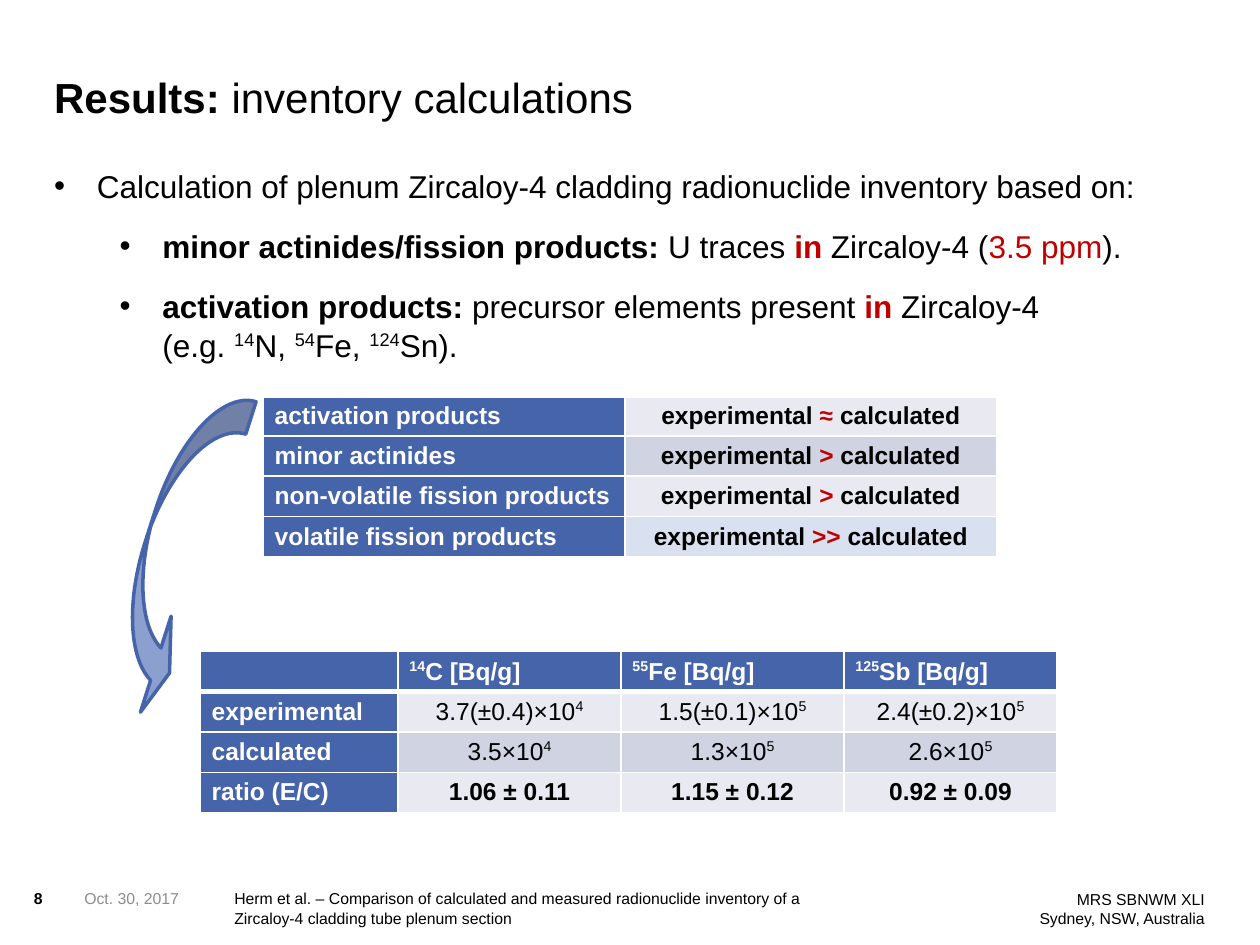
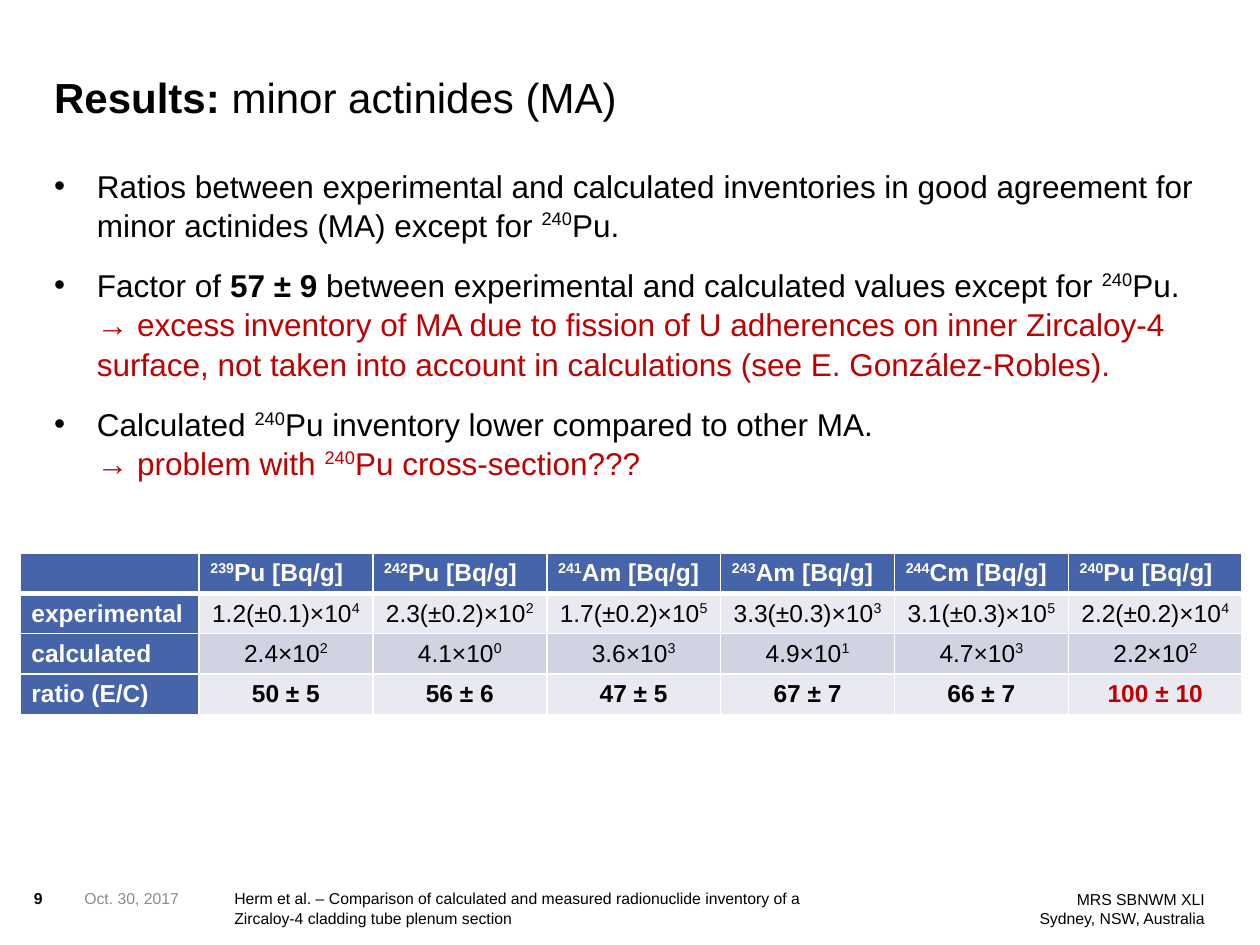
from dataclasses import dataclass, replace
from typing import NamedTuple

from lxml.etree import SubElement
from pptx import Presentation
from pptx.dml.color import RGBColor
from pptx.enum.shapes import MSO_SHAPE
from pptx.enum.text import MSO_ANCHOR, PP_ALIGN
from pptx.oxml.ns import qn
from pptx.util import Inches, Pt

FONT = "Arial"
INK = {
    "black": "000000",
    "white": "FFFFFF",
    "red": "C00000",
    "grey": "8C8C8C",
    "blue": "4664AA",
    "arrow": "8CA0D0",
    "light": "E9EAF1",
    "mid": "CFD3E2",
    "pale": "D9E0EF",
}


class Bit(NamedTuple):
    text: str
    bold: bool = False
    ink: str = "black"
    sup: bool = False


class Box(NamedTuple):
    left: float
    top: float
    width: float
    height: float


class Line(NamedTuple):
    bits: list[Bit]
    indent: float = 0


@dataclass(frozen=True)
class Cell:
    bits: list[Bit]
    fill: str = "blue"
    mid: bool = False


@dataclass(frozen=True)
class Grid:
    left: float
    top: float
    cols: list[float]
    rows: list[list[Cell]]
    rule: int


BREAK = Bit("\n")
TITLE = Box(0.43, 0.36, 7.56, 0.61)
BODY = Box(0.43, 1.31, 9.14, 2.52)
VENUE = Box(6.57, 7.06, 2.99, 0.39)
NUMBER = Box(0.27, 7.05, 0.36, 0.24)
DATE = Box(0.67, 7.05, 1.14, 0.39)
PAPER = Box(1.86, 7.05, 4.65, 0.39)
ROW = 0.32
HANG = 0.34


def tint(name: str) -> RGBColor:
    return RGBColor.from_string(INK[name])


def write(par, bits: list[Bit], size: float) -> None:
    for bit in bits:
        if bit == BREAK:
            par.add_line_break()
            continue
        run = par.add_run()
        run.text = bit.text
        font = run.font
        font.name, font.size, font.bold = FONT, Pt(size), bit.bold
        font.color.rgb = tint(bit.ink)
        if bit.sup:
            run._r.get_or_add_rPr().set("baseline", "36000")


def bullet(par, indent: float) -> None:
    props = par._p.get_or_add_pPr()
    props.set("marL", str(Inches(indent)))
    props.set("indent", str(-Inches(HANG)))
    SubElement(props, qn("a:buFont"), typeface=FONT)
    SubElement(props, qn("a:buChar"), char="•")


def label(slide, box: Box, lines: list[Line], size: float, space: float = 1,
          align=PP_ALIGN.LEFT, anchor=MSO_ANCHOR.TOP) -> None:
    frame = slide.shapes.add_textbox(*map(Inches, box)).text_frame
    frame.word_wrap = True
    frame.vertical_anchor = anchor
    frame.margin_left = frame.margin_right = 0
    frame.margin_top = frame.margin_bottom = 0
    for i, line in enumerate(lines):
        par = frame.add_paragraph() if i else frame.paragraphs[0]
        par.alignment = align
        par.line_spacing = space
        if line.indent:
            par.space_after = Pt(6)
            if i:
                par.space_before = Pt(6)
            bullet(par, line.indent)
        write(par, line.bits, size)


def border(cell, top: float, base: float) -> None:
    props = cell._tc.get_or_add_tcPr()
    for side, width in (("L", 1), ("R", 1), ("T", top), ("B", base)):
        edge = SubElement(props, qn(f"a:ln{side}"), w=str(Pt(width)))
        fill = SubElement(edge, qn("a:solidFill"))
        SubElement(fill, qn("a:srgbClr"), val=INK["white"])


def draw(slide, grid: Grid) -> None:
    count = len(grid.rows)
    table = slide.shapes.add_table(
        count, len(grid.cols), Inches(grid.left), Inches(grid.top),
        Inches(sum(grid.cols)), Inches(ROW * count)).table
    table.first_row = table.horz_banding = False
    for col, width in zip(table.columns, grid.cols):
        col.width = Inches(width)
    for r, row in enumerate(grid.rows):
        table.rows[r].height = Inches(ROW)
        for c, item in enumerate(row):
            cell = table.cell(r, c)
            cell.margin_left = cell.margin_right = Inches(0.09)
            cell.margin_top = cell.margin_bottom = Inches(0.04)
            cell.vertical_anchor = MSO_ANCHOR.MIDDLE
            border(cell, 3 if r == grid.rule else 1,
                   3 if r + 1 == grid.rule else 1)
            cell.fill.solid()
            cell.fill.fore_color.rgb = tint(item.fill)
            par = cell.text_frame.paragraphs[0]
            par.alignment = PP_ALIGN.CENTER if item.mid else PP_ALIGN.LEFT
            write(par, item.bits, 14)
            if not item.bits:
                SubElement(par._p, qn("a:endParaRPr"), sz="1400")


def iso(mass: str, name: str) -> list[Bit]:
    return [Bit(mass, sup=True), Bit(name)]


def head(text: str) -> Cell:
    return Cell([Bit(text, True, "white")])


def power(text: str, fill: str) -> Cell:
    base, exp = text.split("^")
    return Cell([Bit(base + "×10"), Bit(exp, sup=True)], fill, True)


def compare(name: str, sign: str, fill: str) -> list[Cell]:
    bits = [Bit("experimental ", True), Bit(sign, True, "red"),
            Bit(" calculated", True)]
    return [head(name), Cell(bits, fill, True)]


def ratios(names: list[tuple[str, str]], tests: list[str],
           calcs: list[str], ratio: list[Bit]) -> list[list[Cell]]:
    tops = [Cell([bit._replace(bold=True, ink="white")
                  for bit in iso(mass, f"{name} [Bq/g]")])
            for mass, name in names]
    return [
        [Cell([]), *tops],
        [head("experimental"), *(power(v, "light") for v in tests)],
        [head("calculated"), *(power(v, "mid") for v in calcs)],
        [head("ratio (E/C)"), *(Cell([bit], "light", True) for bit in ratio)],
    ]


def start(deck, number: int, title: str, lines: list[Line]):
    slide = deck.slides.add_slide(deck.slide_layouts[6])
    label(slide, VENUE, [Line([Bit("MRS SBNWM XLI")]),
                         Line([Bit("Sydney, NSW, Australia")])],
          9, align=PP_ALIGN.RIGHT)
    label(slide, NUMBER, [Line([Bit(str(number), True)])], 9)
    label(slide, PAPER, [Line([Bit(
        "Herm et al. – Comparison of calculated and measured radionuclide "
        "inventory of a Zircaloy-4 cladding tube plenum section")])], 9, 1.04)
    label(slide, DATE, [Line([Bit("Oct. 30, 2017", ink="grey")])], 9)
    label(slide, TITLE, [Line([Bit("Results: ", True), Bit(title)])], 24,
          anchor=MSO_ANCHOR.BOTTOM)
    label(slide, BODY, lines, 18, 1.04)
    return slide


def arrow(slide, box: Box) -> None:
    shape = slide.shapes.add_shape(
        MSO_SHAPE.CURVED_RIGHT_ARROW, *map(Inches, box))
    for i, value in enumerate((0.54, 1.6, 0.25)):
        shape.adjustments[i] = value
    shape.rotation = 17.7
    shape.shadow.inherit = False
    shape.fill.solid()
    shape.fill.fore_color.rgb = tint("arrow")
    shape.line.color.rgb = tint("blue")
    shape.line.width = Pt(2)


def stock(deck) -> None:
    deep = 0.86
    slide = start(deck, 8, "inventory calculations", [
        Line([Bit("Calculation of plenum Zircaloy-4 cladding radionuclide "
                  "inventory based on:")], HANG),
        Line([Bit("minor actinides/fission products:", True),
              Bit(" U traces "), Bit("in", True, "red"),
              Bit(" Zircaloy-4 ("), Bit("3.5 ppm", ink="red"),
              Bit(").")], deep),
        Line([Bit("activation products:", True),
              Bit(" precursor elements present "), Bit("in", True, "red"),
              Bit(" Zircaloy-4"), BREAK, Bit("(e.g. "), *iso("14", "N, "),
              *iso("54", "Fe, "), *iso("124", "Sn).")], deep),
    ])
    draw(slide, Grid(2.09, 3.14, [2.87, 2.95], [
        compare("activation products", "≈", "light"),
        compare("minor actinides", ">", "mid"),
        compare("non-volatile fission products", ">", "light"),
        compare("volatile fission products", ">>", "pale"),
    ], 0))
    draw(slide, Grid(1.59, 5.17, [1.57, 1.77, 1.77, 1.69], ratios(
        [("14", "C"), ("55", "Fe"), ("125", "Sb")],
        ["3.7(±0.4)^4", "1.5(±0.1)^5", "2.4(±0.2)^5"],
        ["3.5^4", "1.3^5", "2.6^5"],
        [Bit(v, True) for v in ("1.06 ± 0.11", "1.15 ± 0.12", "0.92 ± 0.09")],
    ), 1))
    arrow(slide, Box(1.14, 3.05, 0.5, 2.66))


def minor(deck) -> None:
    slide = start(deck, 9, "minor actinides (MA)", [
        Line([Bit("Ratios between experimental and calculated inventories in "
                  "good agreement for minor actinides (MA) except for "),
              *iso("240", "Pu.")], HANG),
        Line([Bit("Factor of "), Bit("57 ± 9", True),
              Bit(" between experimental and calculated values except for "),
              *iso("240", "Pu."), BREAK,
              Bit("→ excess inventory of MA due to fission of U adherences on "
                  "inner Zircaloy-4 surface, not taken into account in "
                  "calculations (see E. González-Robles).", ink="red")], HANG),
        Line([Bit("Calculated "),
              *iso("240", "Pu inventory lower compared to other MA."), BREAK,
              Bit("→ problem with ", ink="red"),
              *(bit._replace(ink="red")
                for bit in iso("240", "Pu cross-section???"))], HANG),
    ])
    draw(slide, Grid(0.16, 4.39, [1.42] + [1.38] * 6, ratios(
        [("239", "Pu"), ("242", "Pu"), ("241", "Am"),
         ("243", "Am"), ("244", "Cm"), ("240", "Pu")],
        ["1.2(±0.1)^4", "2.3(±0.2)^2", "1.7(±0.2)^5",
         "3.3(±0.3)^3", "3.1(±0.3)^5", "2.2(±0.2)^4"],
        ["2.4^2", "4.1^0", "3.6^3", "4.9^1", "4.7^3", "2.2^2"],
        [*(Bit(v, True) for v in
           ("50 ± 5", "56 ± 6", "47 ± 5", "67 ± 7", "66 ± 7")),
         Bit("100 ± 10", True, "red")],
    ), 1))


def main() -> None:
    deck = Presentation()
    deck.slide_width, deck.slide_height = Inches(10), Inches(7.5)
    stock(deck)
    minor(deck)
    deck.save("out.pptx")


if __name__ == "__main__":
    main()
